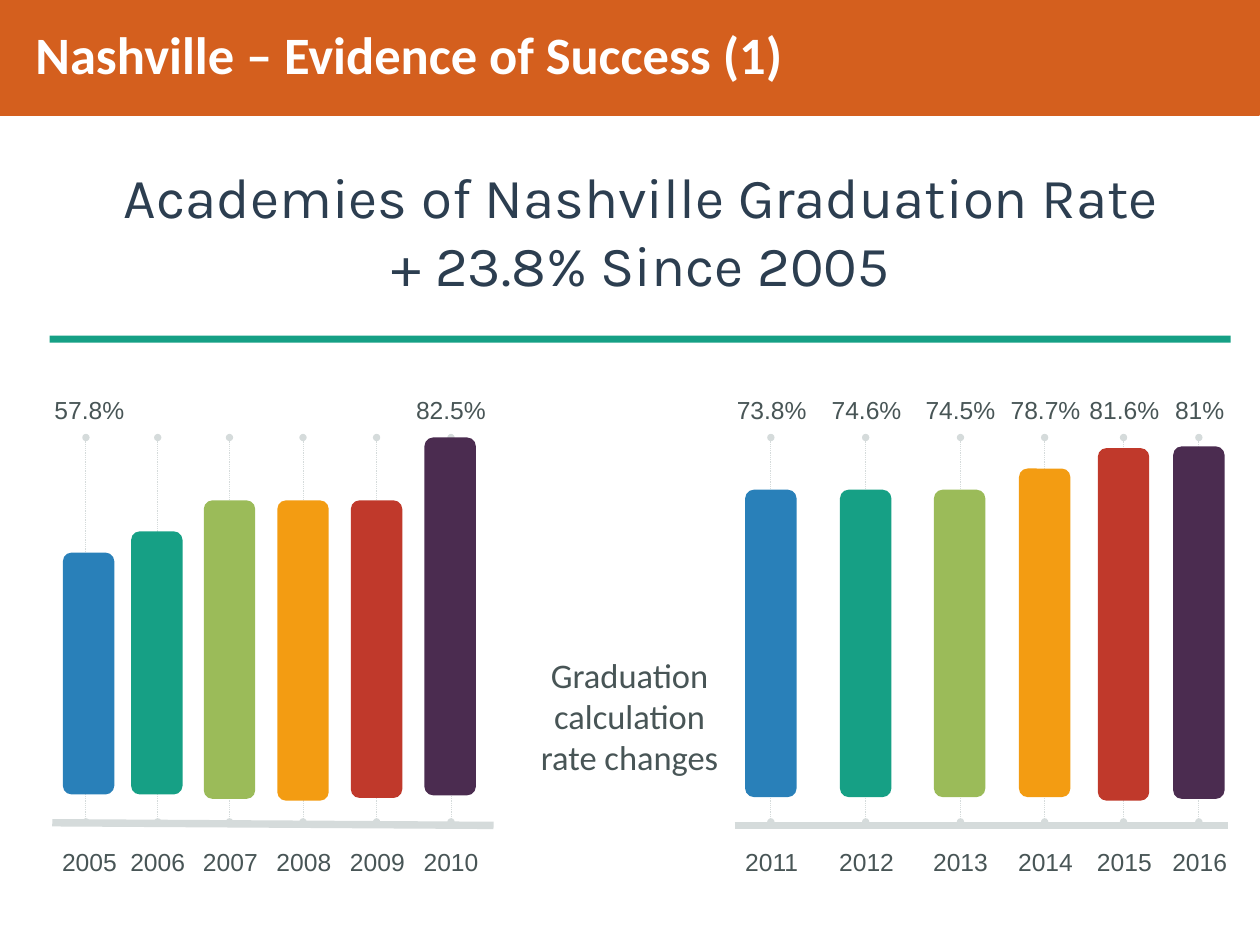
from lxml import etree
from pptx import Presentation
from pptx.dml.color import RGBColor
from pptx.enum.dml import MSO_LINE
from pptx.enum.shapes import MSO_CONNECTOR, MSO_SHAPE
from pptx.enum.text import MSO_ANCHOR, MSO_AUTO_SIZE, PP_ALIGN
from pptx.oxml.ns import qn
from pptx.util import Inches, Pt

RECTANGLE = MSO_SHAPE.RECTANGLE
ROUNDED = MSO_SHAPE.ROUNDED_RECTANGLE
STRAIGHT = MSO_CONNECTOR.STRAIGHT
DOTTED = MSO_LINE.ROUND_DOT
LEFT, CENTER = PP_ALIGN.LEFT, PP_ALIGN.CENTER
TOP, MIDDLE = MSO_ANCHOR.TOP, MSO_ANCHOR.MIDDLE
NO_FIT = MSO_AUTO_SIZE.NONE

ORANGE, WHITE, NAVY, SLATE = "D45F1E", "FFFFFF", "2C3E50", "485556"
BLUE, TEAL, GREEN = "2980B9", "16A085", "9BBB59"
AMBER, RED, PURPLE, GRAY = "F39C12", "C0392B", "4B2C50", "D5DBDB"

BAR_WIDTH = 0.58
LABEL_WIDTH = 0.8
LABEL_HEIGHT = 0.34
RATE_TOP, YEAR_TOP = 4.46, 9.56
STEM_TOP, STEM_BOTTOM = 4.94, 9.28

# year, rate, stem x, bar left, bar top, bar height, colour
BARS = [
    ("2005", "57.8%", 0.97, 0.71, 6.24, 2.73, BLUE),
    ("2006", None, 1.78, 1.48, 6.0, 2.97, TEAL),
    ("2007", None, 2.59, 2.3, 5.65, 3.37, GREEN),
    ("2008", None, 3.42, 3.13, 5.65, 3.39, AMBER),
    ("2009", None, 4.25, 3.96, 5.65, 3.36, RED),
    ("2010", "82.5%", 5.09, 4.79, 4.94, 4.04, PURPLE),
    ("2011", "73.8%", 8.7, 8.41, 5.53, 3.47, BLUE),
    ("2012", "74.6%", 9.77, 9.48, 5.53, 3.47, TEAL),
    ("2013", "74.5%", 10.84, 10.54, 5.53, 3.47, GREEN),
    ("2014", "78.7%", 11.79, 11.5, 5.29, 3.71, AMBER),
    ("2015", "81.6%", 12.68, 12.39, 5.06, 3.98, RED),
    ("2016", "81%", 13.53, 13.24, 5.04, 3.98, PURPLE),
]
AXES = [(0.59, 9.29, 5.57, 9.32), (8.29, 9.32, 13.86, 9.32)]


def colour(value):
    return RGBColor.from_string(value)


class SlideBuilder:
    def __init__(self, slide):
        self.slide = slide
        self.shapes = slide.shapes

    def block(self, kind, left, top, width, height, fill, outline=None):
        shape = self.shapes.add_shape(
            kind, Inches(left), Inches(top), Inches(width), Inches(height))
        shape.shadow.inherit = False
        shape.fill.solid()
        shape.fill.fore_color.rgb = colour(fill)
        if outline:
            shape.line.color.rgb = colour(fill)
            shape.line.width = Pt(outline)
        else:
            shape.line.fill.background()
        return shape

    def line(self, x1, y1, x2, y2, width, stem=False):
        connector = self.shapes.add_connector(
            STRAIGHT, Inches(x1), Inches(y1), Inches(x2), Inches(y2))
        connector.line.color.rgb = colour(GRAY)
        connector.line.width = Pt(width)
        properties = connector.element.spPr
        if stem:
            connector.line.dash_style = DOTTED
            outline = properties.find(qn("a:ln"))
            for end in ("a:headEnd", "a:tailEnd"):
                etree.SubElement(outline, qn(end)).set("type", "oval")
        etree.SubElement(properties, qn("a:effectLst"))

    def fill_text(self, box, lines, size, font, ink, align=CENTER, anchor=TOP,
                  insets=(0, 0), wrap=True, bold=False):
        frame = box.text_frame
        frame.auto_size = NO_FIT
        frame.word_wrap = wrap
        frame.vertical_anchor = anchor
        frame.margin_left = frame.margin_right = Inches(insets[0])
        frame.margin_top = frame.margin_bottom = Inches(insets[1])
        para = frame.paragraphs[0]
        para.alignment = align
        for index, text in enumerate(lines):
            if index:
                para.add_line_break()
            span = para.add_run()
            span.text = text
            span.font.size = Pt(size)
            span.font.name = font
            span.font.bold = bold
            span.font.color.rgb = colour(ink)

    def text(self, left, top, width, height, lines, size, font, ink, **options):
        box = self.shapes.add_textbox(
            Inches(left), Inches(top), Inches(width), Inches(height))
        self.fill_text(box, lines, size, font, ink, **options)

    def title(self, text):
        band = self.block(RECTANGLE, -0.01, 0, 14.22, 1.3, ORANGE, outline=2)
        title = self.shapes.title
        title.left, title.top = Inches(0.3), Inches(0.2)
        title.width, title.height = Inches(13.62), Inches(0.82)
        title.element.addprevious(band.element)
        self.fill_text(title, [text], 42.7, "Calibri", WHITE, align=LEFT,
                       insets=(0.1, 0.05), bold=True)

    def label(self, center, top, text):
        self.text(center - LABEL_WIDTH / 2, top, LABEL_WIDTH, LABEL_HEIGHT,
                  [text], 20, "Arial", SLATE, wrap=False)

    def bar(self, year, rate, stem, left, top, height, fill):
        self.line(stem, STEM_BOTTOM, stem, STEM_TOP, 0.75, stem=True)
        self.block(ROUNDED, left, top, BAR_WIDTH, height, fill)
        center = left + 0.3
        self.label(center, YEAR_TOP, year)
        if rate:
            self.label(center, RATE_TOP, rate)


def main():
    deck = Presentation()
    deck.slide_width, deck.slide_height = Inches(14.22), Inches(10.67)
    page = SlideBuilder(deck.slides.add_slide(deck.slide_layouts[5]))

    page.title("Nashville – Evidence of Success (1)")
    page.text(0.83, 1.75, 12.8, 1.69,
              ["Academies of Nashville Graduation Rate", "+ 23.8% Since 2005"],
              46, "Karla", NAVY, anchor=MIDDLE, insets=(0.16, 0.08))
    page.block(RECTANGLE, 0.56, 3.79, 13.33, 0.08, TEAL)

    for bar in BARS:
        page.bar(*bar)
    for axis in AXES:
        page.line(*axis, 6)
    page.text(5.8, 7.31, 2.61, 1.66, ["Graduation calculation rate changes"],
              28, "Calibri", SLATE, insets=(0.14, 0.07))

    deck.save("out.pptx")


if __name__ == "__main__":
    main()
